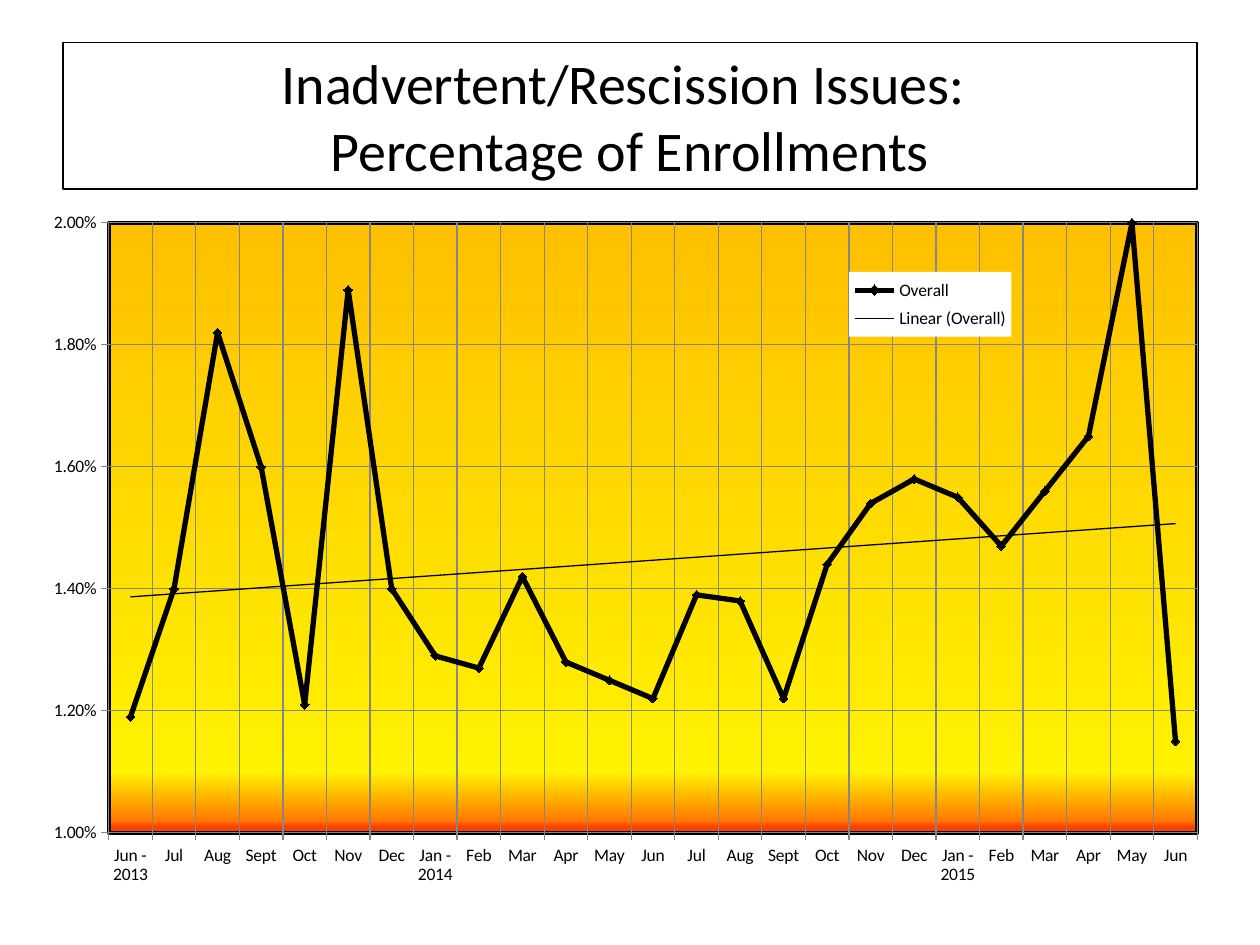
"""Build a slide with a boxed title and a monthly line chart with its trend."""
import dataclasses

import lxml.etree
import pptx
import pptx.chart.data
import pptx.dml.color
import pptx.enum.chart
import pptx.enum.text
import pptx.oxml
import pptx.oxml.ns
import pptx.util

Cm = pptx.util.Cm
Pt = pptx.util.Pt
qn = pptx.oxml.ns.qn


@dataclasses.dataclass(frozen=True)
class Theme:
    font: str = "Calibri"
    title_size: int = 32
    chart_size: int = 10
    ink: str = "000000"
    paper: str = "FFFFFF"
    grid: str = "868686"
    plot_stops: tuple = ((0, "FFC000"), (90, "FFF200"), (98, "FF7A00"), (99, "FF3F00"))


THEME = Theme()
MONTHS = ["Jan", "Feb", "Mar", "Apr", "May", "Jun", "Jul", "Aug", "Sept", "Oct", "Nov", "Dec"]
PERCENTAGES = [
    1.19, 1.40, 1.82, 1.60, 1.21, 1.89, 1.40,
    1.29, 1.27, 1.42, 1.28, 1.25, 1.22, 1.39, 1.38, 1.22, 1.44, 1.54, 1.58,
    1.55, 1.47, 1.56, 1.65, 2.00, 1.15,
]


def rgb(value):
    """Return a colour object for a hex value."""
    return pptx.dml.color.RGBColor.from_string(value)


def month_labels(count, first_month=5, first_year=2013):
    """Return month names, with the year on the first label and each January."""
    labels = []
    for i in range(count):
        years, month = divmod(first_month + i, 12)
        year = f" - {first_year + years}" if i == 0 or month == 0 else ""
        labels.append(MONTHS[month] + year)
    return labels


def style_line(line, color, width):
    """Give a line a solid colour and a width in points."""
    line.color.rgb = rgb(color)
    line.width = Pt(width)


def chart_xml(content):
    """Parse one chart element from its XML text."""
    return pptx.oxml.parse_xml(content.replace(
        ">", f" {pptx.oxml.ns.nsdecls('c', 'a')}>", 1))


def set_layout(parent, index, box, inner=False):
    """Place a chart part by fractions of the chart's size."""
    for old in parent.findall(qn("c:layout")):
        parent.remove(old)
    target = '<c:layoutTarget val="inner"/>' if inner else ""
    modes = "".join(f'<c:{k}Mode val="edge"/>' for k in "xy")
    sizes = "".join(f'<c:{k} val="{v}"/>' for k, v in zip("xywh", box))
    parent.insert(index, chart_xml(
        f"<c:layout><c:manualLayout>{target}{modes}{sizes}</c:manualLayout></c:layout>"))


def add_title(slide, text):
    """Place and format the outlined title."""
    sp = slide.shapes.title
    sp.left, sp.top, sp.width, sp.height = Cm(1.27), Cm(0.85), Cm(22.86), Cm(2.96)
    style_line(sp.line, THEME.ink, 0.75)
    tf = sp.text_frame
    tf.text = text
    tf.vertical_anchor = pptx.enum.text.MSO_ANCHOR.MIDDLE
    p = tf.paragraphs[0]
    p.alignment = pptx.enum.text.PP_ALIGN.CENTER
    for r in p.runs:
        r.font.name = THEME.font
        r.font.size = Pt(THEME.title_size)
        r.font.color.rgb = rgb(THEME.ink)


def style_axis(axis):
    """Give an axis outside ticks and grey lines."""
    axis.has_major_gridlines = True
    style_line(axis.major_gridlines.format.line, THEME.grid, 0.75)
    style_line(axis.format.line, THEME.grid, 0.75)
    axis.major_tick_mark = pptx.enum.chart.XL_TICK_MARK.OUTSIDE
    axis.minor_tick_mark = pptx.enum.chart.XL_TICK_MARK.NONE


def style_series(series):
    """Format the line and its markers and add a linear trend."""
    series.smooth = False
    style_line(series.format.line, THEME.ink, 3)
    marker = series.marker
    marker.style = pptx.enum.chart.XL_MARKER_STYLE.DIAMOND
    marker.size = 5
    marker.format.fill.solid()
    marker.format.fill.fore_color.rgb = rgb(THEME.ink)
    style_line(marker.format.line, THEME.ink, 0.75)
    series._element.find(qn("c:cat")).addprevious(chart_xml(
        '<c:trendline><c:spPr><a:ln w="9525"><a:solidFill>'
        f'<a:srgbClr val="{THEME.ink}"/></a:solidFill></a:ln></c:spPr>'
        '<c:trendlineType val="linear"/><c:dispRSqr val="0"/>'
        '<c:dispEq val="0"/></c:trendline>'))


def style_plot_area(chart):
    """Place the plot area and give it a gradient and a border."""
    area = chart._chartSpace.find(f".//{qn('c:plotArea')}")
    set_layout(area, 0, (0.065, 0.034, 0.919, 0.868), inner=True)
    stops = "".join(
        f'<a:gs pos="{pos * 1000}"><a:srgbClr val="{color}"/></a:gs>'
        for pos, color in THEME.plot_stops)
    area.append(chart_xml(
        f'<c:spPr><a:gradFill><a:gsLst>{stops}</a:gsLst>'
        '<a:lin ang="5400000" scaled="0"/></a:gradFill>'
        f'<a:ln w="28575"><a:solidFill><a:srgbClr val="{THEME.ink}"/>'
        '</a:solidFill></a:ln></c:spPr>'))


def add_legend(chart):
    """Add a white legend over the plot area."""
    chart.has_legend = True
    legend = chart.legend
    legend.position = pptx.enum.chart.XL_LEGEND_POSITION.RIGHT
    legend.include_in_layout = False
    set_layout(legend._element, 1, (0.69, 0.104, 0.137, 0.092))
    legend._element.find(qn("c:overlay")).addnext(chart_xml(
        f'<c:spPr><a:solidFill><a:srgbClr val="{THEME.paper}"/></a:solidFill></c:spPr>'))


def add_line_chart(slide):
    """Add the chart of monthly percentages."""
    data = pptx.chart.data.CategoryChartData(number_format="0.00%")
    data.categories = month_labels(len(PERCENTAGES))
    data.add_series("Overall", [round(v / 100, 4) for v in PERCENTAGES])
    chart = slide.shapes.add_chart(
        pptx.enum.chart.XL_CHART_TYPE.LINE_MARKERS,
        Cm(0.64), Cm(4.01), Cm(23.88), Cm(14.17), data).chart
    chart.has_title = False
    chart.font.name = THEME.font
    chart.font.size = Pt(THEME.chart_size)
    chart.font.color.rgb = rgb(THEME.ink)
    chart.plots[0].vary_by_categories = False
    for axis in (chart.category_axis, chart.value_axis):
        style_axis(axis)
    axis = chart.value_axis
    axis.minimum_scale, axis.maximum_scale, axis.major_unit = 0.01, 0.02, 0.002
    axis.tick_labels.number_format = "0.00%"
    axis.tick_labels.number_format_is_linked = False
    style_series(chart.plots[0].series[0])
    style_plot_area(chart)
    add_legend(chart)


def main():
    """Build and save the presentation."""
    prs = pptx.Presentation()
    prs.slide_width, prs.slide_height = Cm(25.4), Cm(19.05)
    s = prs.slides.add_slide(prs.slide_layouts[5])
    add_title(s, "Inadvertent/Rescission Issues: \vPercentage of Enrollments")
    add_line_chart(s)
    prs.save("out.pptx")


if __name__ == "__main__":
    main()
